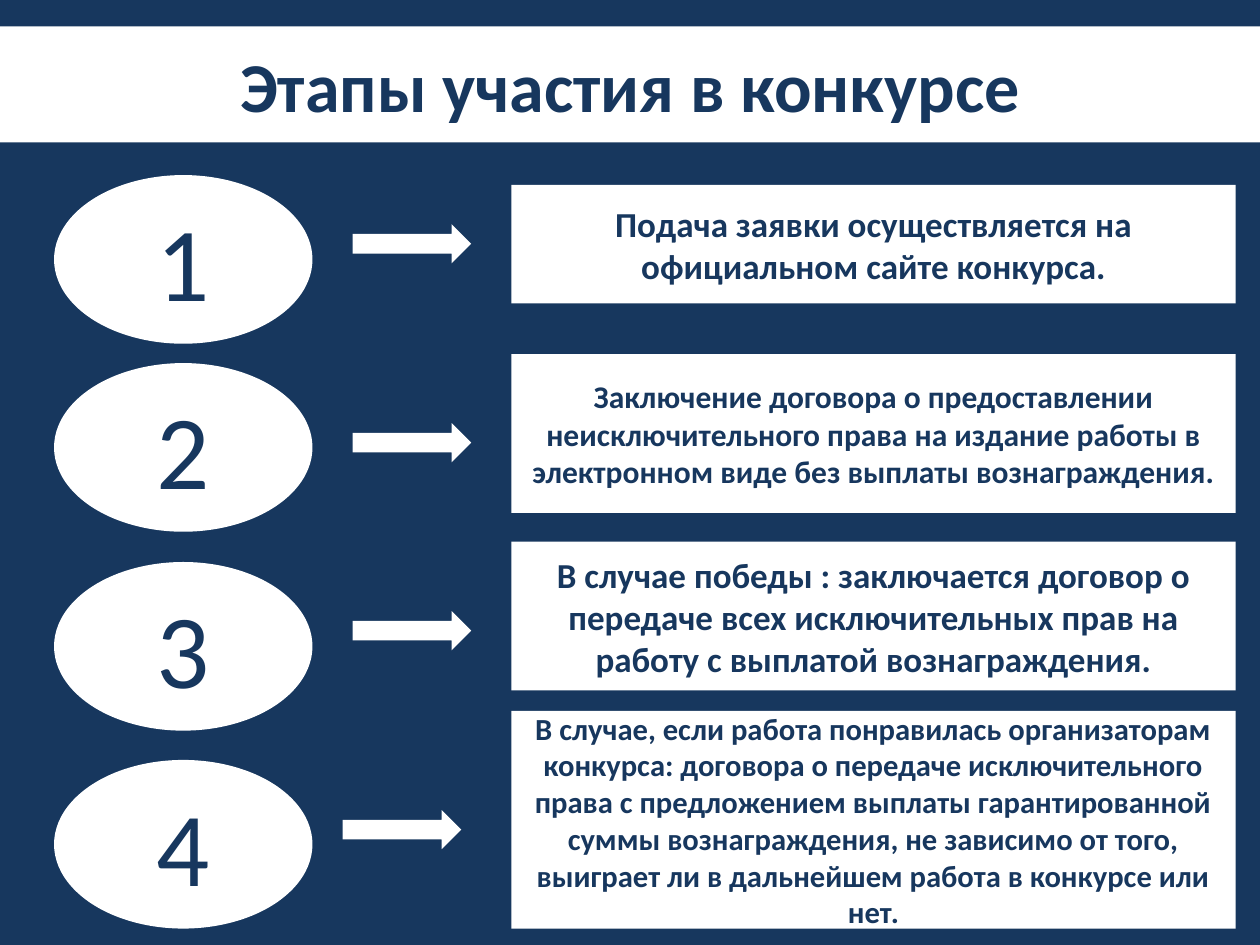
from dataclasses import dataclass

import pptx
import pptx.dml.color
import pptx.enum.shapes
import pptx.enum.text
import pptx.util
from pptx.util import Cm

COLORS = {"navy": "17375E", "white": "FFFFFF"}
SHAPES = pptx.enum.shapes.MSO_SHAPE
TITLE_ONLY = 5


@dataclass
class Area:
    left: float
    top: float
    width: float
    height: float


@dataclass
class Stage:
    text: str
    size: float
    oval_top: float
    arrow_top: float
    box_top: float
    box_height: float
    arrow_left: float = 7.11


STAGES = [
    Stage("Подача заявки осуществляется на официальном сайте конкурса.",
          20, 3.53, 4.52, 3.73, 2.39),
    Stage("Заключение договора о предоставлении неисключительного права на "
          "издание работы в электронном виде без выплаты вознаграждения.",
          18, 7.32, 8.53, 7.14, 3.2),
    Stage("В случае победы : заключается договор о передаче всех "
          "исключительных прав на работу с выплатой вознаграждения.",
          20, 11.33, 12.32, 10.92, 3),
    Stage("В случае, если работа понравилась организаторам конкурса: договора "
          "о передаче исключительного права с предложением выплаты "
          "гарантированной суммы вознаграждения, не зависимо от того, "
          "выиграет ли в дальнейшем работа в конкурсе или нет.",
          17.5, 15.32, 16.33, 14.33, 4.39, arrow_left=6.91),
]


def color(name: str) -> pptx.dml.color.RGBColor:
    return pptx.dml.color.RGBColor.from_string(COLORS[name])


def set_values(target, values: dict) -> None:
    for name, value in values.items():
        setattr(target, name, value)


def paint(shape, name: str) -> None:
    shape.fill.solid()
    shape.fill.fore_color.rgb = color(name)


def write(shape, text: str, size: float, bold: bool) -> None:
    """Put one centred navy paragraph into the shape."""
    frame = shape.text_frame
    frame.text = text
    set_values(frame, {
        "word_wrap": True,
        "auto_size": pptx.enum.text.MSO_AUTO_SIZE.NONE,
        "vertical_anchor": pptx.enum.text.MSO_ANCHOR.MIDDLE,
    })
    para = frame.paragraphs[0]
    para.alignment = pptx.enum.text.PP_ALIGN.CENTER
    span = para.runs[0]
    set_values(span.font, {
        "name": "Calibri", "size": pptx.util.Pt(size), "bold": bold,
    })
    span.font.color.rgb = color("navy")


def add_white_shape(page, kind, area: Area):
    shape = page.shapes.add_shape(kind, Cm(area.left), Cm(area.top),
                                  Cm(area.width), Cm(area.height))
    shape.shadow.inherit = False
    shape.line.fill.background()
    paint(shape, "white")
    return shape


def add_title(page, text: str, area: Area) -> None:
    title = page.shapes.title
    set_values(title, {
        "left": Cm(area.left), "top": Cm(area.top),
        "width": Cm(area.width), "height": Cm(area.height),
    })
    paint(title, "white")
    write(title, text, 40, True)


def add_stage(page, number: int, stage: Stage) -> None:
    oval = add_white_shape(page, SHAPES.OVAL,
                           Area(1.09, stage.oval_top, 5.21, 3.4))
    write(oval, str(number), 60, False)
    add_white_shape(page, SHAPES.RIGHT_ARROW,
                    Area(stage.arrow_left, stage.arrow_top, 2.39, 0.79))
    box = add_white_shape(page, SHAPES.RECTANGLE,
                          Area(10.31, stage.box_top, 14.6, stage.box_height))
    write(box, stage.text, stage.size, True)


def main() -> None:
    deck = pptx.Presentation()
    set_values(deck, {"slide_width": Cm(25.4), "slide_height": Cm(19.05)})
    page = deck.slides.add_slide(deck.slide_layouts[TITLE_ONLY])
    paint(page.background, "navy")
    add_title(page, "Этапы участия в конкурсе", Area(0, 0.53, 25.4, 2.34))
    for number, stage in enumerate(STAGES, start=1):
        add_stage(page, number, stage)
    deck.save("out.pptx")


if __name__ == "__main__":
    main()
